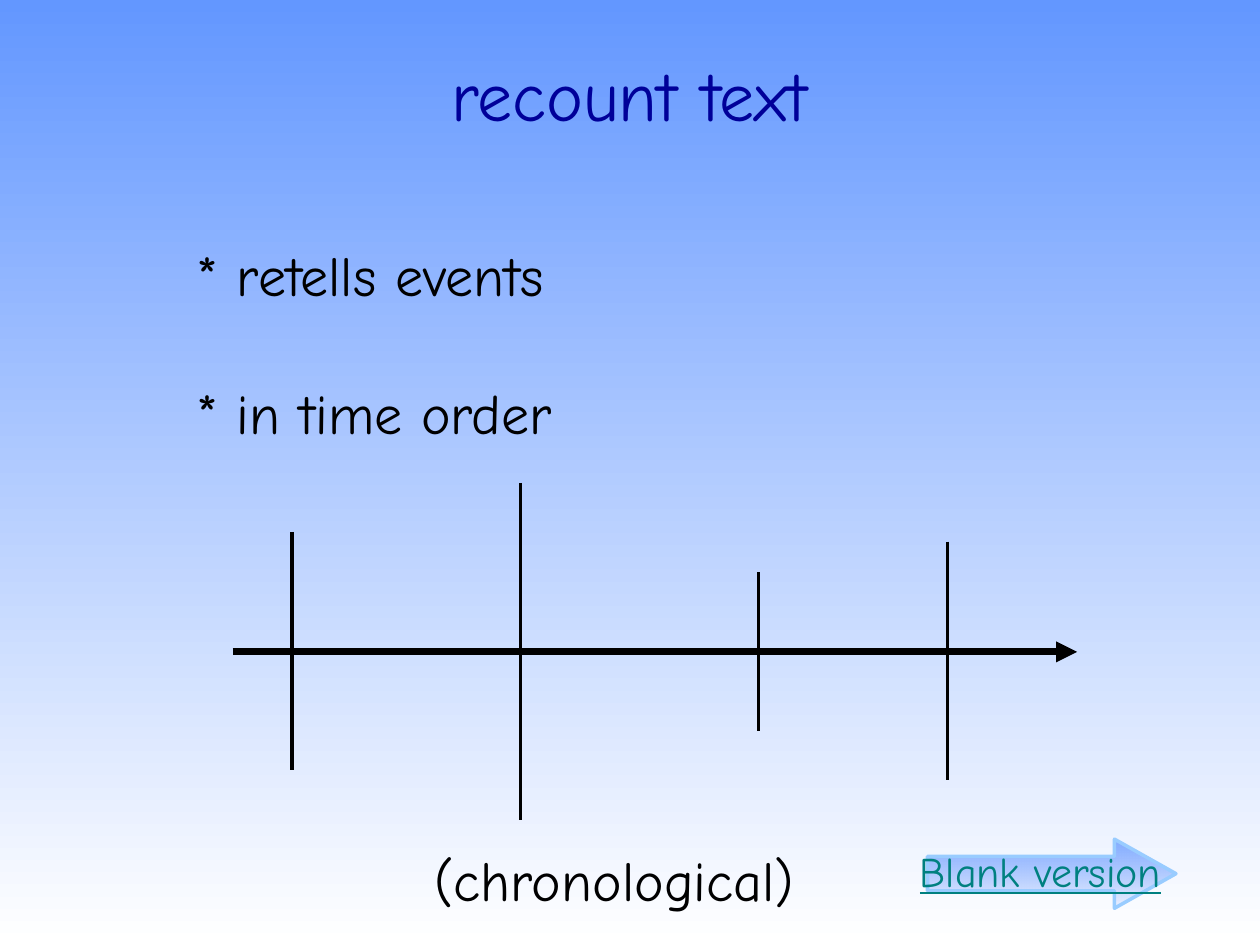
from lxml import etree
from pptx import Presentation
from pptx.dml.color import RGBColor
from pptx.enum.shapes import MSO_CONNECTOR, MSO_SHAPE
from pptx.enum.text import PP_ALIGN
from pptx.oxml.ns import qn
from pptx.util import Pt

STRAIGHT = MSO_CONNECTOR.STRAIGHT
RIGHT_ARROW = MSO_SHAPE.RIGHT_ARROW
LEFT, CENTER = PP_ALIGN.LEFT, PP_ALIGN.CENTER

FONT = "Comic Neue"
BLACK = RGBColor(0x00, 0x00, 0x00)
NAVY = RGBColor(0x00, 0x00, 0x99)
TEAL = RGBColor(0x00, 0x80, 0x80)
BLUE = RGBColor(0x63, 0x97, 0xFF)
PALE_BLUE = RGBColor(0xEF, 0xF3, 0xFF)
EDGE_BLUE = RGBColor(0x99, 0xCC, 0xFF)
WHITE = RGBColor(0xFF, 0xFF, 0xFF)

AXIS_Y = 372.5
# x, top and bottom of each event mark
EVENT_MARKS = [(167, 304, 440), (297.5, 276, 468.5), (433.5, 327, 417.5), (541.5, 309.5, 445.5)]


def fill_downwards(fill, top, bottom):
    """Apply a vertical gradient from top to bottom."""
    fill.gradient()
    fill.gradient_angle = 270
    for stop, color in zip(fill.gradient_stops, (top, bottom)):
        stop.color.rgb = color
    stop_positions = (0, 1)
    for stop, position in zip(fill.gradient_stops, stop_positions):
        stop.position = position


def add_text(slide, text, left, top, width, height, size=32, color=BLACK,
             align=LEFT, underline=None):
    box = slide.shapes.add_textbox(Pt(left), Pt(top), Pt(width), Pt(height))
    tf = box.text_frame
    tf.word_wrap = True
    p = tf.paragraphs[0]
    p.text = text
    p.alignment = align
    p.font.name = FONT
    p.font.size = Pt(size)
    p.font.color.rgb = color
    p.font.underline = underline


def add_line(slide, x1, y1, x2, y2, width):
    line = slide.shapes.add_connector(STRAIGHT, Pt(x1), Pt(y1), Pt(x2), Pt(y2))
    line.line.color.rgb = BLACK
    line.line.width = Pt(width)
    etree.SubElement(line._element.spPr, qn("a:effectLst"))
    return line


def add_timeline(slide):
    axis = add_line(slide, 133, AXIS_Y, 615.5, AXIS_Y, 4)
    etree.SubElement(axis.line._get_or_add_ln(), qn("a:tailEnd"), type="triangle")
    for x, top, bottom in EVENT_MARKS:
        add_line(slide, x, top, x, bottom, 2)


def add_arrow(slide, left, top, width, height):
    sp = slide.shapes.add_shape(RIGHT_ARROW, Pt(left), Pt(top), Pt(width), Pt(height))
    sp.shadow.inherit = False
    sp.adjustments[0] = 0.5
    sp.adjustments[1] = 0.89
    fill_downwards(sp.fill, BLUE, PALE_BLUE)
    first_color = sp._element.spPr.find(".//" + qn("a:srgbClr"))
    etree.SubElement(first_color, qn("a:alpha"), val="77000")
    sp.line.color.rgb = EDGE_BLUE
    sp.line.width = Pt(2)


def main():
    prs = Presentation()
    prs.slide_width, prs.slide_height = Pt(720), Pt(540)
    slide = prs.slides.add_slide(prs.slide_layouts[6])
    fill_downwards(slide.background.fill, BLUE, WHITE)

    add_text(slide, "recount text", 167, 26, 385, 55.5, size=40, color=NAVY, align=CENTER)
    add_text(slide, "* retells events", 105, 134, 272, 45.5)
    add_text(slide, "* in time order", 105, 213, 284, 45.5)
    add_timeline(slide)
    add_text(slide, "(chronological)", 241, 479.5, 238.5, 45.5)
    add_arrow(slide, 530, 479.5, 142, 39.5)
    add_text(slide, "Blank version", 518.5, 479.5, 187, 36, size=24, color=TEAL, underline=True)

    prs.save("out.pptx")


if __name__ == "__main__":
    main()
